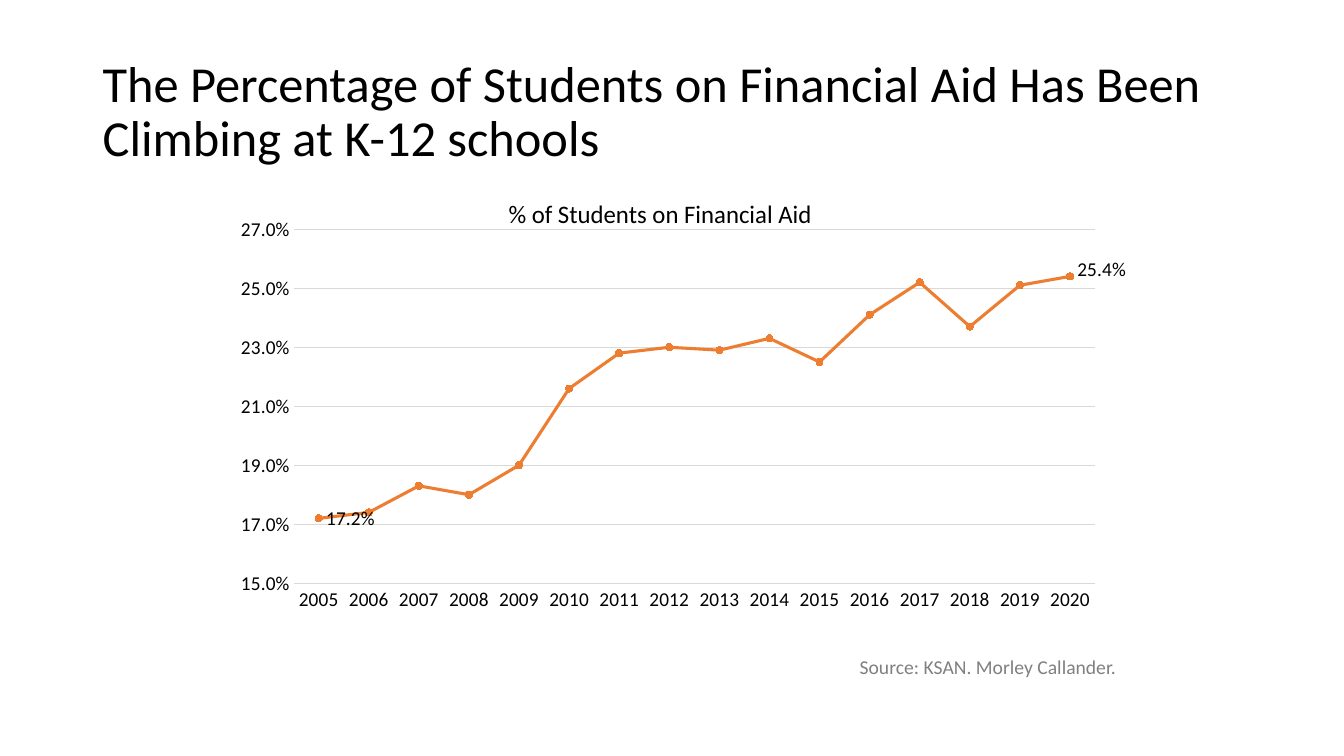
from dataclasses import dataclass

from lxml import etree
from pptx import Presentation
from pptx.chart.data import CategoryChartData as Data
from pptx.dml.color import RGBColor as Color
from pptx.enum.chart import XL_CHART_TYPE as Kind
from pptx.enum.chart import XL_LABEL_POSITION as Spot
from pptx.enum.chart import XL_MARKER_STYLE as Mark
from pptx.enum.chart import XL_TICK_MARK as Tick
from pptx.enum.text import MSO_ANCHOR as Anchor
from pptx.enum.text import PP_ALIGN as Align
from pptx.oxml.ns import qn
from pptx.util import Inches, Pt

TITLE = "The Percentage of Students on Financial Aid Has Been Climbing at K-12 schools"
HEAD = "% of Students on Financial Aid"
SOURCE = "Source: KSAN. Morley Callander."
START = 2005
RATES = [0.172, 0.174, 0.183, 0.18, 0.19, 0.216, 0.228, 0.23,
         0.229, 0.233, 0.225, 0.241, 0.252, 0.237, 0.251, 0.254]
LABELS = {0: 0, len(RATES) - 1: -0.015}  # point: shift as a share of chart height

TITLE_BOX = (0.92, 0.4, 11.5, 1.45)
CHART_BOX = (2.17, 1.67, 9, 4.58)
SOURCE_BOX = (1.67, 6.47, 9.5, 0.53)


@dataclass(frozen=True)
class Theme:
    font: str = "Calibri"
    ink: str = "000000"
    mute: str = "808080"
    grid: str = "D9D9D9"
    line: str = "ED7D31"
    big: int = 36
    mid: int = 18
    small: int = 14


LOOK = Theme()


def style(font, size, color=LOOK.ink):
    font.name, font.size, font.bold = LOOK.font, Pt(size), False
    font.color.rgb = Color.from_string(color)


def stroke(line, color, width):
    line.color.rgb = Color.from_string(color)
    line.width = Pt(width)


def write(slide, text, box, size, color=LOOK.ink, align=Align.LEFT, anchor=Anchor.TOP):
    frame = slide.shapes.add_textbox(*map(Inches, box)).text_frame
    frame.word_wrap = True
    frame.vertical_anchor = anchor
    par = frame.paragraphs[0]
    par.alignment, par.line_spacing = align, 0.9
    run = par.add_run()
    run.text = text
    style(run.font, size, color)


def place(node, index, **parts):
    """Give a chart part a manual layout in shares of the chart."""
    for old in node.findall(qn("c:layout")):
        node.remove(old)
    layout = etree.Element(qn("c:layout"))
    manual = etree.SubElement(layout, qn("c:manualLayout"))
    for name, value in parts.items():
        etree.SubElement(manual, qn(f"c:{name}")).set("val", str(value))
    node.insert(index, layout)


def plot(slide):
    data = Data(number_format="0.0%")
    data.categories = [str(START + i) for i in range(len(RATES))]
    data.add_series("Series 1", RATES)
    chart = slide.shapes.add_chart(
        Kind.LINE_MARKERS, *map(Inches, CHART_BOX), data).chart
    style(chart.font, LOOK.small)
    chart.has_legend = False

    chart.has_title = True
    par = chart.chart_title.text_frame.paragraphs[0]
    run = par.add_run()
    run.text = HEAD
    style(run.font, LOOK.mid)
    head = chart.chart_title._element
    place(head, 1, xMode="edge", yMode="edge", x=0.32, y=0.05)
    area = chart._chartSpace.chart.plotArea
    place(area, 0, layoutTarget="inner", xMode="edge", yMode="edge",
          x=0.084, y=0.132, w=0.899, h=0.767)

    years, rates = chart.category_axis, chart.value_axis
    for axis in (years, rates):
        axis.major_tick_mark = axis.minor_tick_mark = Tick.NONE
        style(axis.tick_labels.font, LOOK.small)
    stroke(years.format.line, LOOK.grid, 0.75)
    rates.format.line.fill.background()
    stroke(rates.major_gridlines.format.line, LOOK.grid, 0.75)
    rates.minimum_scale, rates.maximum_scale, rates.major_unit = 0.15, 0.27, 0.02
    rates.tick_labels.number_format = "0.0%"
    rates.tick_labels.number_format_is_linked = False

    chart.plots[0].vary_by_categories = False
    line = chart.plots[0].series[0]
    line.smooth = False
    stroke(line.format.line, LOOK.line, 2.25)
    line.marker.style, line.marker.size = Mark.CIRCLE, 5
    line.marker.format.fill.solid()
    line.marker.format.fill.fore_color.rgb = Color.from_string(LOOK.line)
    stroke(line.marker.format.line, LOOK.line, 0.75)

    line.data_labels.show_value = False
    for index, shift in LABELS.items():
        label = line.points[index].data_label
        style(label.font, LOOK.small)
        label.position = Spot.RIGHT
        if shift:
            tags = line.data_labels._element.findall(qn("c:dLbl"))
            place(tags[-1], 1, x=0, y=shift)


def main():
    deck = Presentation()
    deck.slide_width, deck.slide_height = Inches(13.33), Inches(7.5)
    slide = deck.slides.add_slide(deck.slide_layouts[6])
    write(slide, TITLE, TITLE_BOX, LOOK.big, anchor=Anchor.MIDDLE)
    plot(slide)
    write(slide, SOURCE, SOURCE_BOX, LOOK.small, color=LOOK.mute, align=Align.RIGHT)
    deck.save("out.pptx")


if __name__ == "__main__":
    main()
